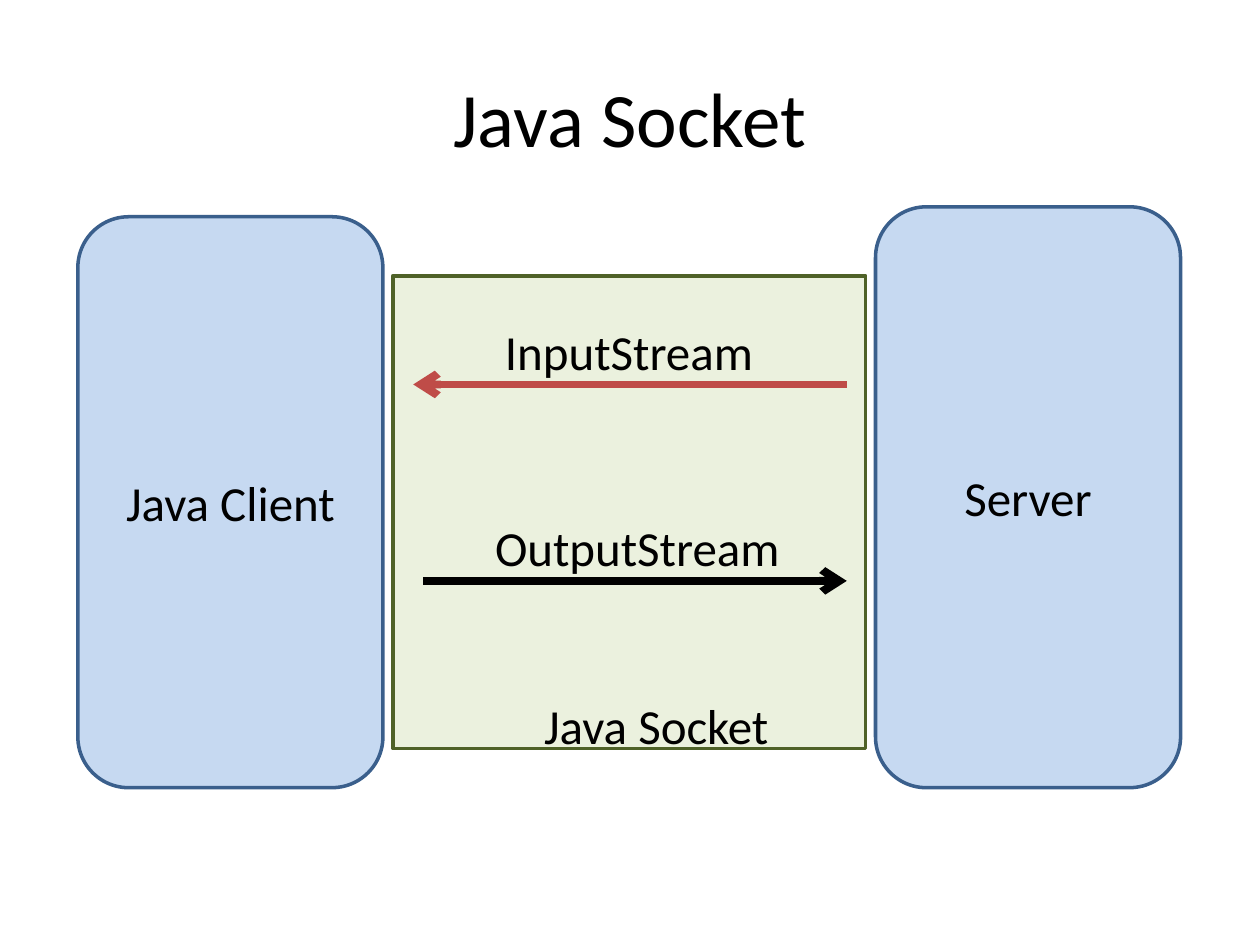
from dataclasses import dataclass

import pptx
import pptx.dml.color
import pptx.enum.shapes
import pptx.enum.text
import pptx.oxml
import pptx.oxml.ns
import pptx.util
from pptx.util import Cm

RGBColor = pptx.dml.color.RGBColor
MSO_SHAPE = pptx.enum.shapes.MSO_SHAPE
PP_ALIGN = pptx.enum.text.PP_ALIGN
MSO_ANCHOR = pptx.enum.text.MSO_ANCHOR
MSO_AUTO_SIZE = pptx.enum.text.MSO_AUTO_SIZE

BLACK = RGBColor(0x00, 0x00, 0x00)
BLUE_FILL = RGBColor(0xC6, 0xD9, 0xF1)
BLUE_LINE = RGBColor(0x3A, 0x5F, 0x8C)
GREEN_FILL = RGBColor(0xEB, 0xF1, 0xDE)
GREEN_LINE = RGBColor(0x4F, 0x62, 0x28)
RED = RGBColor(0xBF, 0x4C, 0x48)
FONT = "Calibri"


@dataclass
class Box:
    kind: int
    left: float
    top: float
    width: float
    height: float
    fill: RGBColor
    line: RGBColor
    text: str = ""


@dataclass
class Label:
    text: str
    left: float
    top: float
    width: float
    height: float = 1.45


@dataclass
class Arrow:
    start: float
    end: float
    y: float
    color: RGBColor


BOXES = [
    Box(MSO_SHAPE.ROUNDED_RECTANGLE, 1.57, 4.37, 6.15, 11.51, BLUE_FILL, BLUE_LINE, "Java Client"),
    Box(MSO_SHAPE.ROUNDED_RECTANGLE, 17.65, 4.17, 6.15, 11.71, BLUE_FILL, BLUE_LINE, "Server"),
    Box(MSO_SHAPE.RECTANGLE, 7.92, 5.56, 9.53, 9.53, GREEN_FILL, GREEN_LINE),
]
ARROWS = [
    Arrow(17.07, 8.33, 7.75, RED),
    Arrow(8.53, 17.07, 11.71, BLACK),
]
LABELS = [
    Label("Java Socket", 10.72, 13.89, 5.08),
    Label("InputStream", 9.93, 6.35, 5.56),
    Label("OutputStream", 9.73, 10.31, 6.3),
]


def set_text(sp, text: str, *, size: int = 28, align=PP_ALIGN.CENTER,
             anchor=MSO_ANCHOR.MIDDLE, wrap: bool = True) -> None:
    tf = sp.text_frame
    tf.word_wrap = wrap
    tf.vertical_anchor = anchor
    p = tf.paragraphs[0]
    p.alignment = align
    r = p.add_run()
    r.text = text
    r.font.name = FONT
    r.font.size = pptx.util.Pt(size)
    r.font.color.rgb = BLACK


def add_box(s, box: Box) -> None:
    sp = s.shapes.add_shape(box.kind, Cm(box.left), Cm(box.top), Cm(box.width), Cm(box.height))
    sp.shadow.inherit = False
    sp.fill.solid()
    sp.fill.fore_color.rgb = box.fill
    sp.line.color.rgb = box.line
    sp.line.width = pptx.util.Pt(2)
    if box.text:
        set_text(sp, box.text)


def add_arrow(s, arrow: Arrow) -> None:
    cxn = s.shapes.add_connector(pptx.enum.shapes.MSO_CONNECTOR.STRAIGHT,
                                 Cm(arrow.start), Cm(arrow.y), Cm(arrow.end), Cm(arrow.y))
    cxn.line.color.rgb = arrow.color
    cxn.line.width = pptx.util.Pt(4.5)
    ns = pptx.oxml.ns.nsdecls("a")
    ln = cxn.line._get_or_add_ln()
    ln.append(pptx.oxml.parse_xml(f'<a:tailEnd {ns} type="arrow"/>'))
    ln.addnext(pptx.oxml.parse_xml(f"<a:effectLst {ns}/>"))


def add_label(s, label: Label) -> None:
    sp = s.shapes.add_textbox(Cm(label.left), Cm(label.top), Cm(label.width), Cm(label.height))
    set_text(sp, label.text, align=PP_ALIGN.LEFT, anchor=MSO_ANCHOR.TOP, wrap=False)
    sp.text_frame.auto_size = MSO_AUTO_SIZE.SHAPE_TO_FIT_TEXT


def main() -> None:
    prs = pptx.Presentation()
    prs.slide_width, prs.slide_height = Cm(25.4), Cm(19.05)
    s = prs.slides.add_slide(prs.slide_layouts[6])

    # Title
    title = s.shapes.add_textbox(Cm(1.27), Cm(0.76), Cm(22.86), Cm(3.18))
    set_text(title, "Java Socket", size=44)

    # Client, server and the socket between them
    for box in BOXES:
        add_box(s, box)

    # Streams and their labels
    for arrow in ARROWS:
        add_arrow(s, arrow)
    for label in LABELS:
        add_label(s, label)

    prs.save("out.pptx")


if __name__ == "__main__":
    main()
